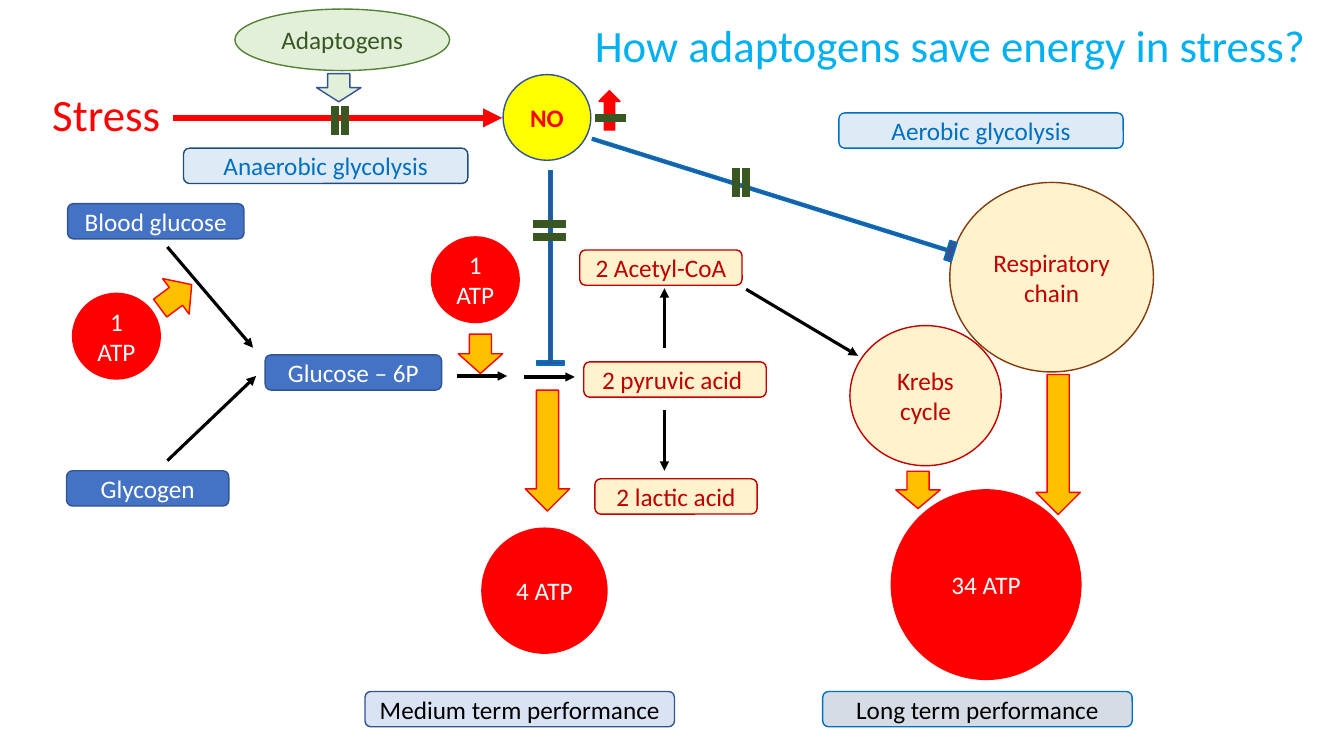
from dataclasses import dataclass

from lxml.etree import SubElement
from pptx import Presentation
from pptx.dml.color import RGBColor
from pptx.enum.shapes import MSO_CONNECTOR, MSO_SHAPE
from pptx.enum.text import MSO_ANCHOR, MSO_AUTO_SIZE, PP_ALIGN
from pptx.oxml.ns import qn
from pptx.util import Emu, Pt

PX = 9144  # 100 px to the inch
COLORS = {
    "white": "FFFFFF", "black": "000000", "red": "FF0000", "dark red": "C00000",
    "yellow": "FFFF00", "amber": "FFC000", "cream": "FFF2CC", "brown": "843C0B",
    "blue": "4472C4", "navy": "325491", "deep blue": "2F5597", "ink blue": "1F4E79",
    "strong blue": "0070C0", "sky": "00B0F0", "pale blue": "DEEBF7",
    "lavender": "DAE3F3", "slate": "D6DCE5",
    "pale green": "E2F0D9", "green": "548235", "dark green": "385723",
}
ELLIPSE, BOX = MSO_SHAPE.OVAL, MSO_SHAPE.ROUNDED_RECTANGLE
ARROW, INHIBITOR = MSO_SHAPE.RIGHT_ARROW, MSO_SHAPE.UP_ARROW_CALLOUT


@dataclass(frozen=True)
class Style:
    fill: str
    line: str
    text: str = "white"
    bold: bool = False


@dataclass(frozen=True)
class Node:
    text: str
    kind: MSO_SHAPE
    left: int
    top: int
    width: int
    height: int
    style: Style


@dataclass(frozen=True)
class Block:
    kind: MSO_SHAPE
    left: int
    top: int
    width: int
    height: int
    rotation: float
    style: Style


@dataclass(frozen=True)
class Line:
    x1: int
    y1: int
    x2: int
    y2: int
    color: str = "black"
    weight: float = 2.25
    arrow: bool = True


SUBSTRATE = Style("blue", "navy")
PRODUCT = Style("cream", "dark red", "dark red")
ATP = Style("red", "red")
YIELD = Style("amber", "red")
INHIBITION = Style("deep blue", "strong blue")

NODES = [
    Node("Krebs cycle", ELLIPSE, 843, 323, 150, 139, PRODUCT),
    Node("Glycogen", BOX, 66, 467, 161, 35, SUBSTRATE),
    Node("Blood glucose", BOX, 67, 202, 175, 35, SUBSTRATE),
    Node("Glucose – 6P", BOX, 263, 352, 175, 35, SUBSTRATE),
    Node("2 pyruvic acid ", BOX, 579, 359, 181, 35, PRODUCT),
    Node("2 lactic acid", BOX, 590, 475, 161, 35, PRODUCT),
    Node("2 Acetyl-CoA", BOX, 575, 248, 161, 35, PRODUCT),
    Node("Respiratory chain", ELLIPSE, 942, 181, 202, 188,
         Style("cream", "brown", "dark red")),
    Node("1 ATP", ELLIPSE, 428, 235, 87, 85, ATP),
    Node("1 ATP", ELLIPSE, 72, 291, 87, 85, ATP),
    Node("NO", ELLIPSE, 499, 74, 87, 85, Style("yellow", "navy", "red", True)),
    Node("4 ATP", ELLIPSE, 478, 524, 124, 124, ATP),
    Node("34 ATP", ELLIPSE, 884, 486, 188, 188, ATP),
    Node("Anaerobic glycolysis", BOX, 182, 147, 282, 35,
         Style("pale blue", "ink blue", "strong blue")),
    Node("Aerobic glycolysis", BOX, 832, 112, 282, 35,
         Style("pale blue", "strong blue", "strong blue")),
    Node("Medium term performance", BOX, 362, 686, 307, 35,
         Style("lavender", "navy", "black")),
    Node("Long term performance", BOX, 816, 686, 307, 35,
         Style("slate", "strong blue", "black")),
    Node("Adaptogens", ELLIPSE, 233, 9, 213, 61,
         Style("pale green", "green", "dark green")),
]

PATHWAY = [
    Line(172, 117, 498, 117, "red", 4.5),
    Line(166, 245, 251, 345),
    Line(166, 457, 254, 373),
    Line(453, 373, 503, 373),
    Line(659, 407, 659, 467),
    Line(740, 287, 851, 353),
    Line(659, 345, 659, 286),
    Line(520, 374, 570, 374),
]

BLOCKS = [
    Block(ARROW, 322, 65, 28, 44, 90, Style("pale green", "navy")),
    Block(ARROW, 155, 272, 39, 44, 323.3, YIELD),
    Block(ARROW, 457, 329, 39, 44, 90, YIELD),
    Block(ARROW, 483, 425, 120, 44, 90, YIELD),
    Block(ARROW, 980, 419, 139, 44, 90, YIELD),
    Block(ARROW, 892, 464, 37, 44, 90, YIELD),
    Block(INHIBITOR, 532, 169, 28, 193, 0, INHIBITION),
    Block(INHIBITOR, 757, 6, 20, 376, 287.4, INHIBITION),
    Block(ARROW, 585, 99, 39, 21, 270, ATP),
]

# Bars that show where adaptogens interrupt a path
BARS = [
    *[(x, 105, x, 134) for x in (332, 342)],
    *[(x, 167, x, 195) for x in (730, 740)],
    *[(529, y, 561, y) for y in (222, 235)],
    (590, 117, 621, 117),
]


def color(name: str) -> RGBColor:
    return RGBColor.from_string(COLORS[name])


def write(shape, text: str, size: int, text_color: str, align: PP_ALIGN,
          anchor: MSO_ANCHOR, bold: bool = False, spacing: float = 1.0) -> None:
    frame = shape.text_frame
    frame.text = text
    frame.word_wrap = True
    frame.auto_size = MSO_AUTO_SIZE.NONE
    frame.vertical_anchor = anchor
    paragraph = frame.paragraphs[0]
    paragraph.alignment = align
    paragraph.line_spacing = spacing
    font = paragraph.runs[0].font
    font.name, font.size, font.bold = "Calibri", Pt(size), bold
    font.color.rgb = color(text_color)


def draw_shape(slide, item: Node | Block):
    box = (item.left, item.top, item.width, item.height)
    shape = slide.shapes.add_shape(item.kind, *[Emu(v * PX) for v in box])
    shape.shadow.inherit = False
    shape.fill.solid()
    shape.fill.fore_color.rgb = color(item.style.fill)
    shape.line.color.rgb = color(item.style.line)
    shape.line.width = Pt(1)
    return shape


def draw_node(slide, node: Node) -> None:
    write(draw_shape(slide, node), node.text, 18, node.style.text,
          PP_ALIGN.CENTER, MSO_ANCHOR.MIDDLE, node.style.bold)


def draw_block(slide, block: Block) -> None:
    shape = draw_shape(slide, block)
    shape.rotation = block.rotation
    if block.kind == INHIBITOR:
        for index, value in enumerate((0.25, 0.074, 0, 0.02)):
            shape.adjustments[index] = value


def draw_line(slide, line: Line) -> None:
    ends = (line.x1, line.y1, line.x2, line.y2)
    connector = slide.shapes.add_connector(
        MSO_CONNECTOR.STRAIGHT, *[Emu(v * PX) for v in ends])
    connector.line.color.rgb = color(line.color)
    connector.line.width = Pt(line.weight)
    if line.arrow:
        SubElement(connector.line._get_or_add_ln(), qn("a:tailEnd"), type="triangle")
    SubElement(connector._element.spPr, qn("a:effectLst"))


def main() -> None:
    presentation = Presentation()
    presentation.slide_width = Emu(1333 * PX)
    presentation.slide_height = Emu(750 * PX)
    slide = presentation.slides.add_slide(presentation.slide_layouts[5])

    # Title and stress label
    title = slide.shapes.title
    title.left, title.top, title.width, title.height = [
        Emu(v * PX) for v in (561, 19, 744, 60)]
    write(title, "How adaptogens save energy in stress?", 32, "sky",
          PP_ALIGN.RIGHT, MSO_ANCHOR.TOP, spacing=0.9)
    stress = slide.shapes.add_textbox(*[Emu(v * PX) for v in (42, 73, 166, 86)])
    write(stress, "Stress", 32, "red", PP_ALIGN.LEFT, MSO_ANCHOR.MIDDLE, spacing=0.9)

    # Metabolic pathway
    for node in NODES:
        draw_node(slide, node)
    for line in PATHWAY:
        draw_line(slide, line)

    # Energy yield and inhibition, then the interrupting bars
    for block in BLOCKS:
        draw_block(slide, block)
    for bar in BARS:
        draw_line(slide, Line(*bar, "dark green", 6, False))

    presentation.save("out.pptx")


if __name__ == "__main__":
    main()
